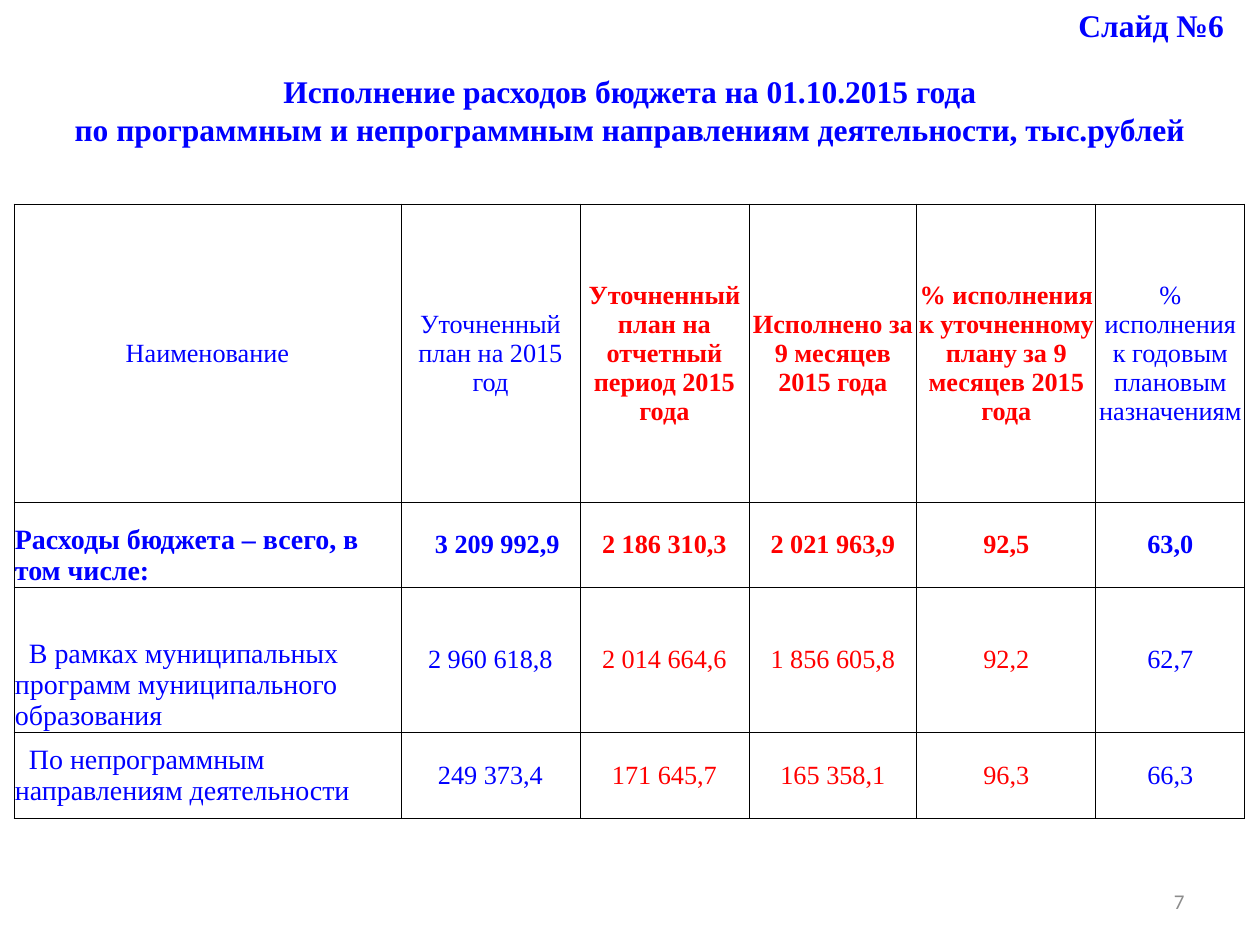
from dataclasses import dataclass

from lxml.etree import SubElement
from pptx import Presentation
from pptx.dml.color import RGBColor
from pptx.enum.text import MSO_ANCHOR, PP_ALIGN
from pptx.oxml.ns import qn
from pptx.util import Emu, Pt


@dataclass(frozen=True)
class Theme:
    blue: str = "0000FF"
    red: str = "FF0000"
    gray: str = "8C8C8C"
    border: str = "000000"
    serif: str = "Times New Roman"
    sans: str = "Calibri"
    title_size: int = 18
    label_size: int = 16
    cell_size: int = 15
    number_size: int = 12
    border_width: float = 0.5


THEME = Theme()
PIXELS_PER_INCH = 126

COLUMN_WIDTHS = (387, 179, 169, 168, 179, 149)
ROW_HEIGHTS = (298, 85, 145, 86)
RED_COLUMNS = (2, 3, 4)
TOTAL_ROW = 1
FIRST_LINE_INDENT = 14
TOTAL_INDENT = 33

ROWS = (
    ("Наименование", "Уточненный план на 2015 год",
     "Уточненный план на отчетный период 2015 года",
     "Исполнено за 9 месяцев 2015 года",
     "% исполнения к уточненному плану за 9 месяцев 2015 года",
     "% исполнения к годовым плановым назначениям"),
    ("Расходы бюджета – всего, в том числе:",
     "3 209 992,9", "2 186 310,3", "2 021 963,9", "92,5", "63,0"),
    ("В рамках муниципальных программ муниципального образования",
     "2 960 618,8", "2 014 664,6", "1 856 605,8", "92,2", "62,7"),
    ("По непрограммным направлениям деятельности",
     "249 373,4", "171 645,7", "165 358,1", "96,3", "66,3"),
)


def px(length):
    return Emu(round(length * 914400 / PIXELS_PER_INCH))


def write_text(frame, text, size=THEME.title_size, color=THEME.blue, bold=False,
               font=THEME.serif, align=PP_ALIGN.LEFT, indent=0):
    """Write one paragraph per line of text, with an optional first-line indent."""
    frame.word_wrap = True
    for index, line in enumerate(text.split("\n")):
        paragraph = frame.add_paragraph() if index else frame.paragraphs[0]
        paragraph.alignment = align
        if indent:
            paragraph._p.get_or_add_pPr().set("indent", str(px(indent)))
        run = paragraph.add_run()
        run.text = line
        run.font.name = font
        run.font.size = Pt(size)
        run.font.bold = bold
        run.font.color.rgb = RGBColor.from_string(color)


def add_text(slide, box, text, anchor=MSO_ANCHOR.TOP, **text_format):
    frame = slide.shapes.add_textbox(*map(px, box)).text_frame
    frame.vertical_anchor = anchor
    write_text(frame, text, **text_format)


def set_borders(cell):
    properties = cell._tc.get_or_add_tcPr()
    for side in ("lnL", "lnR", "lnT", "lnB"):
        line = SubElement(properties, qn(f"a:{side}"), w=str(Pt(THEME.border_width)))
        fill = SubElement(line, qn("a:solidFill"))
        SubElement(fill, qn("a:srgbClr"), val=THEME.border)


def cell_format(row, column):
    """Return the text format that belongs to a place in the table."""
    is_label = column == 0 and row > 0
    is_red = column in RED_COLUMNS
    is_grand_total = (row, column) == (TOTAL_ROW, 1)
    indent = TOTAL_INDENT if is_grand_total else 0
    if is_label and row > TOTAL_ROW:
        indent = FIRST_LINE_INDENT
    return {
        "size": THEME.label_size if is_label else THEME.cell_size,
        "color": THEME.red if is_red else THEME.blue,
        "bold": row == TOTAL_ROW or (row == 0 and is_red),
        "align": PP_ALIGN.LEFT if is_label or is_grand_total else PP_ALIGN.CENTER,
        "indent": indent,
    }


def add_heading(slide, box):
    left, top, width, height = box
    add_text(slide, (left + 1066, top, 194, 50), "Слайд №6", bold=True)
    add_text(slide, (left, top + 66, width, height - 66),
             "Исполнение расходов бюджета на 01.10.2015 года\n"
             "по программным и непрограммным направлениям деятельности, тыс.рублей",
             bold=True, align=PP_ALIGN.CENTER)


def add_budget_table(slide, box):
    table = slide.shapes.add_table(len(ROWS), len(COLUMN_WIDTHS), *map(px, box)).table
    table.first_row = table.horz_banding = False
    for column, width in zip(table.columns, COLUMN_WIDTHS):
        column.width = px(width)
    for row, height in zip(table.rows, ROW_HEIGHTS):
        row.height = px(height)
    for row, texts in enumerate(ROWS):
        for column, text in enumerate(texts):
            cell = table.cell(row, column)
            cell.margin_left = cell.margin_right = cell.margin_top = px(1)
            cell.margin_bottom = 0
            # Labels of the two wrapped rows sit on the lower border
            sits_low = column == 0 and row in (1, 2)
            cell.vertical_anchor = MSO_ANCHOR.BOTTOM if sits_low else MSO_ANCHOR.MIDDLE
            write_text(cell.text_frame, text, **cell_format(row, column))
            set_borders(cell)
            cell.fill.background()


def add_slide_number(slide, box):
    add_text(slide, box, "7", anchor=MSO_ANCHOR.MIDDLE, size=THEME.number_size,
             color=THEME.gray, font=THEME.sans, align=PP_ALIGN.RIGHT)


def main():
    presentation = Presentation()
    presentation.slide_width, presentation.slide_height = px(1260), px(945)
    slide = presentation.slides.add_slide(presentation.slide_layouts[6])

    add_slide_number(slide, (903, 876, 294, 50))
    add_budget_table(slide, (14, 204, sum(COLUMN_WIDTHS), sum(ROW_HEIGHTS)))
    add_heading(slide, (0, 0, 1260, 155))

    presentation.save("out.pptx")


if __name__ == "__main__":
    main()
